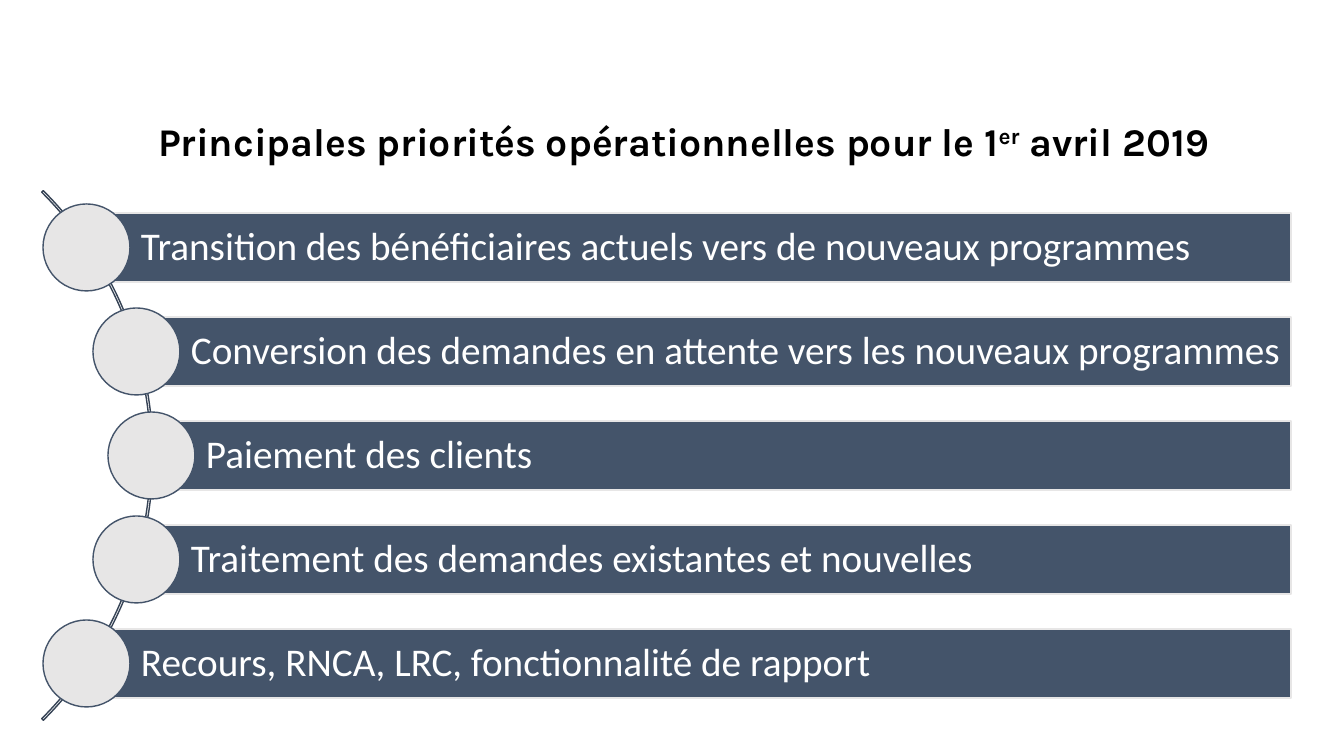
from pptx import Presentation
from pptx.dml.color import RGBColor
from pptx.enum.shapes import MSO_SHAPE as SHAPE
from pptx.enum.text import MSO_ANCHOR as ANCHOR, MSO_AUTO_SIZE as AUTO, PP_ALIGN as ALIGN
from pptx.util import Emu, Pt

PX = 914400 / 100.8
NAVY, GREY, ARC_LINE = "44546A", "E7E6E6", "364355"

TITLE = [("Principales priorités opérationnelles pour le 1", False),
         ("er", True),
         (" avril 2019", False)]

# Circle centre and text of each priority
PRIORITIES = [
    (86, "Transition des bénéficiaires actuels vers de nouveaux programmes"),
    (136, "Conversion des demandes en attente vers les nouveaux programmes"),
    (151, "Paiement des clients"),
    (136, "Traitement des demandes existantes et nouvelles"),
    (86, "Recours, RNCA, LRC, fonctionnalité de rapport"),
]
FIRST_Y, PITCH = 247, 104
BAR_RIGHT, BAR_H, CIRCLE = 1291, 69, 87


def px(n):
    return Emu(round(n * PX))


def color(value):
    return RGBColor.from_string(value)


def add_run(p, text, size, font, text_color, bold=False, superscript=False):
    r = p.add_run()
    r.text = text
    r.font.size, r.font.name, r.font.bold = Pt(size), font, bold
    r.font.color.rgb = color(text_color)
    if superscript:
        r.font._element.set("baseline", "30000")


def add_shape(s, kind, x, y, w, h, line, fill=None):
    sp = s.shapes.add_shape(kind, px(x), px(y), px(w), px(h))
    sp.shadow.inherit = False
    if fill:
        sp.fill.solid()
        sp.fill.fore_color.rgb = color(fill)
    else:
        sp.fill.background()
    sp.line.color.rgb = color(line)
    sp.line.width = Pt(1)
    return sp


def add_title(s):
    sp = s.shapes.title
    sp.left, sp.top, sp.width, sp.height = px(51), px(87), px(1265), px(113)
    tf = sp.text_frame
    tf.auto_size = AUTO.NONE
    tf.word_wrap = True
    tf.vertical_anchor = ANCHOR.MIDDLE
    p = tf.paragraphs[0]
    p.alignment, p.line_spacing = ALIGN.CENTER, 0.9
    for text, superscript in TITLE:
        add_run(p, text, 28, "Karla", "000000", True, superscript)


def add_arc(s):
    sp = add_shape(s, SHAPE.BLOCK_ARC, -596, 81, 749, 749, ARC_LINE)
    # Start angle, end angle, thickness
    for i, value in enumerate((189, 27, 0.003)):
        sp.adjustments[i] = value


def add_priority(s, x, y, text):
    # Bar with its text
    bar = add_shape(s, SHAPE.RECTANGLE, x, y - BAR_H // 2, BAR_RIGHT - x, BAR_H, GREY, NAVY)
    tf = bar.text_frame
    tf.word_wrap = True
    tf.vertical_anchor = ANCHOR.MIDDLE
    tf.margin_left = px(55)
    tf.margin_top = tf.margin_right = tf.margin_bottom = px(7)
    p = tf.paragraphs[0]
    p.alignment, p.line_spacing = ALIGN.LEFT, 0.9
    add_run(p, text, 28, "Calibri", "FFFFFF")
    # Circle over its left end
    add_shape(s, SHAPE.OVAL, x - CIRCLE // 2, y - CIRCLE // 2, CIRCLE, CIRCLE, NAVY, GREY)


def main():
    prs = Presentation()
    prs.slide_width, prs.slide_height = px(1344), px(756)
    s = prs.slides.add_slide(prs.slide_layouts[5])
    add_title(s)
    add_arc(s)
    for i, (x, text) in enumerate(PRIORITIES):
        add_priority(s, x, FIRST_Y + i * PITCH, text)
    prs.save("out.pptx")


if __name__ == "__main__":
    main()
